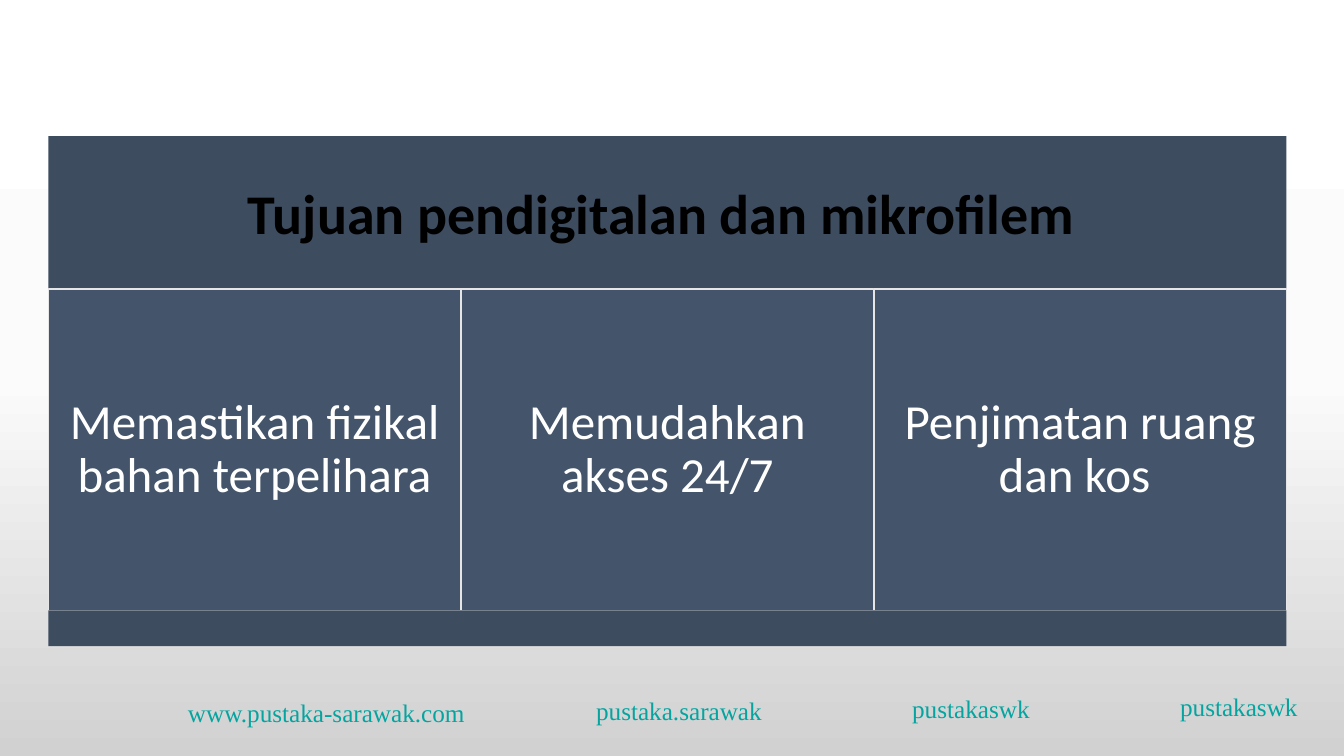
from copy import deepcopy

from pptx import Presentation
from pptx.dml.color import RGBColor
from pptx.enum.shapes import MSO_SHAPE
from pptx.enum.text import MSO_ANCHOR, MSO_AUTO_SIZE, PP_ALIGN
from pptx.oxml.ns import qn
from pptx.util import Inches, Pt

WIDTH, HEIGHT = 13.33, 7.5
BAND = RGBColor(0x3E, 0x4C, 0x60)
CARD = RGBColor(0x44, 0x54, 0x6A)
EDGE = RGBColor(0xE7, 0xE6, 0xE6)
TEAL = RGBColor(0x04, 0xA5, 0xA0)
BLACK = RGBColor(0, 0, 0)
WHITE = RGBColor(0xFF, 0xFF, 0xFF)
PALE = RGBColor(0xFB, 0xFB, 0xFB)
GREY = RGBColor(0xD1, 0xD1, 0xD1)

TITLE = "Tujuan pendigitalan dan mikrofilem "
GOALS = ("Memastikan fizikal bahan terpelihara", "Memudahkan akses 24/7",
         "Penjimatan ruang dan kos ")
LINKS = (("www.pustaka-sarawak.com", 1.71, 0.06, 3, PP_ALIGN.RIGHT),
         ("pustaka.sarawak", 5.63, 0.04, 2.21, PP_ALIGN.CENTER),
         ("pustakaswk", 8.77, 0.02, 1.72, PP_ALIGN.CENTER),
         ("pustakaswk", 11.51, 0, 1.46, PP_ALIGN.RIGHT))


def write(shape, text, size, color, font="Calibri", bold=False,
          align=PP_ALIGN.CENTER, anchor=MSO_ANCHOR.MIDDLE, inset=None, lead=None):
    """Put formatted text into a shape."""
    frame = shape.text_frame
    frame.text = text
    frame.word_wrap = True
    frame.auto_size = MSO_AUTO_SIZE.NONE
    frame.vertical_anchor = anchor
    if inset is not None:
        frame.margin_left = frame.margin_right = Inches(inset)
        frame.margin_top = frame.margin_bottom = Inches(inset)
    para = frame.paragraphs[0]
    para.alignment = align
    if lead:
        para.line_spacing = lead
    face = para.font
    face.name, face.size, face.bold = font, Pt(size), bold
    face.color.rgb = color


def block(slide, box, fill, edge=None):
    """Add a flat rectangle."""
    shape = slide.shapes.add_shape(MSO_SHAPE.RECTANGLE, *map(Inches, box))
    shape.shadow.inherit = False
    shape.fill.solid()
    shape.fill.fore_color.rgb = fill
    if edge:
        shape.line.color.rgb = edge
        shape.line.width = Pt(1)
    else:
        shape.line.fill.background()
    return shape


def backdrop(slide):
    """Shade the slide from white at the top to grey."""
    fill = slide.background.fill
    fill.gradient()
    fill.gradient_angle = 270
    first = slide.element.find(".//" + qn("a:gs"))
    first.addnext(deepcopy(first))
    for stop, place, color in zip(fill.gradient_stops, (0, 0.5, 1), (WHITE, PALE, GREY)):
        stop.position = place
        stop.color.rgb = color


def header(slide, box):
    """Place the title as a filled band."""
    title = slide.shapes.title
    title.left, title.top, title.width, title.height = map(Inches, box)
    title.fill.solid()
    title.fill.fore_color.rgb = BAND
    write(title, TITLE, 40, BLACK, bold=True, inset=0.17)


def panel(slide, box):
    """Stack the title band, the row of goals and the base band."""
    left, top, width, height = box
    head, body, base = (share * height for share in (0.3, 0.63, 0.07))
    header(slide, (left, top, width, head))
    step = width / len(GOALS)
    for col, goal in enumerate(GOALS):
        card = block(slide, (left + col * step, top + head, step, body), CARD, EDGE)
        write(card, goal, 35, WHITE, inset=0.15, lead=0.9)
    block(slide, (left, top + head + body, width, base), BAND)


def footer(slide, top, height):
    """Set the web and social names along the foot."""
    for text, left, drop, width, align in LINKS:
        box = slide.shapes.add_textbox(*map(Inches, (left, top + drop, width, height)))
        write(box, text, 18, TEAL, font="Times New Roman", align=align,
              anchor=MSO_ANCHOR.TOP)


def main():
    """Build and save the deck."""
    deck = Presentation()
    deck.slide_width, deck.slide_height = Inches(WIDTH), Inches(HEIGHT)
    slide = deck.slides.add_slide(deck.slide_layouts[5])
    backdrop(slide)
    footer(slide, 6.81, 0.4)
    panel(slide, (0.48, 0.18 * HEIGHT, 12.28, 5.06))
    deck.save("out.pptx")


if __name__ == "__main__":
    main()
